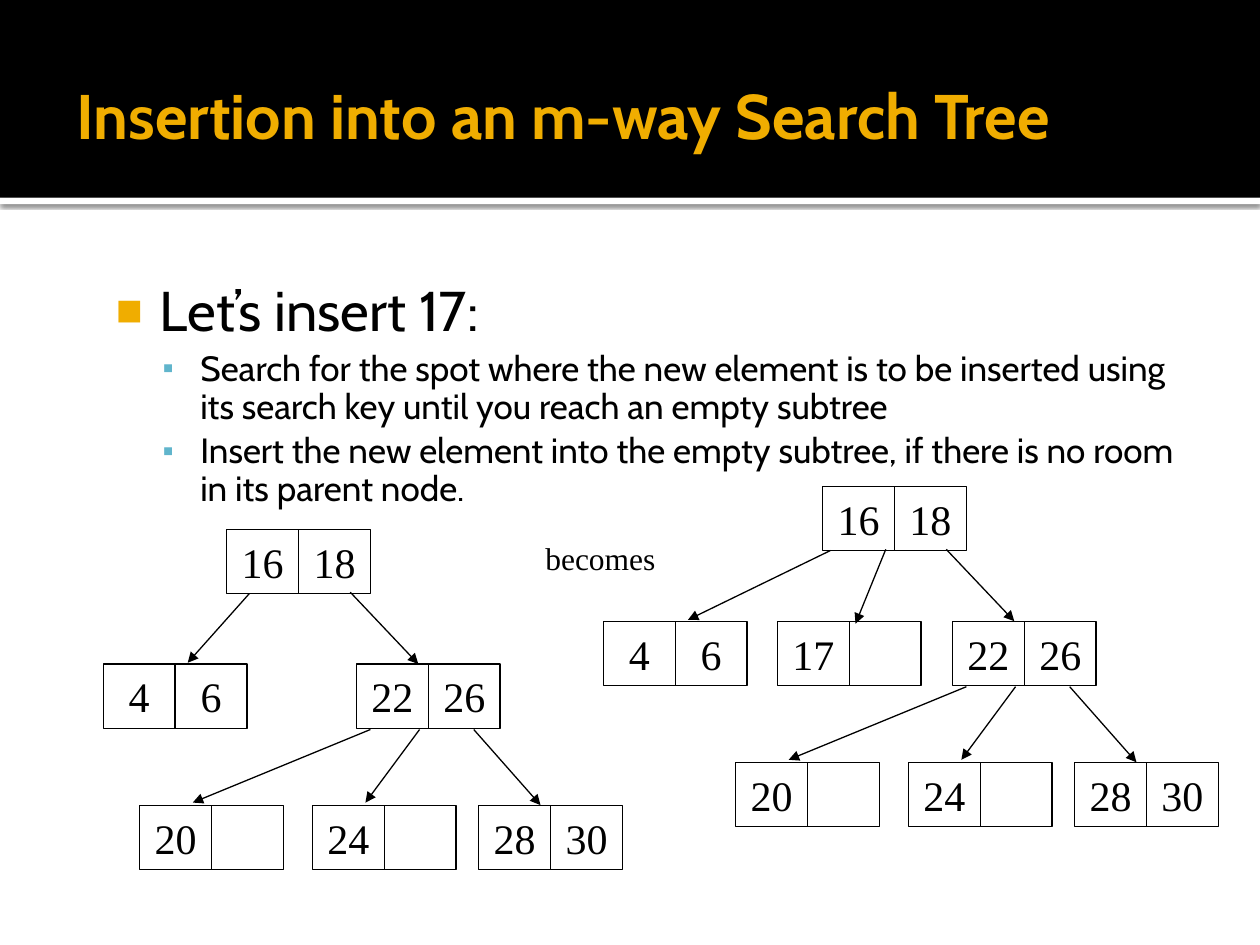
from lxml import etree
from pptx import Presentation
from pptx.dml.color import RGBColor
from pptx.enum import shapes, text
from pptx.oxml import ns
from pptx.util import Inches, Pt

BLACK = RGBColor(0x00, 0x00, 0x00)
WHITE = RGBColor(0xFF, 0xFF, 0xFF)
AMBER = RGBColor(0xF0, 0xAD, 0x00)
BLUE = RGBColor(0x60, 0xB5, 0xCC)
SANS, SERIF = "Cabin", "Times New Roman"

# Content
TITLE = "Insertion into an m-way Search Tree"
# text, size, space before, left indent, hanging indent, bullet, colour, bullet size %
BODY = [
    ("Let’s insert 17:", 32, 0, 0.48, 0.35, "■", AMBER, 80),
    ("Search for the spot where the new element is to be inserted using "
     "its search key until you reach an empty subtree", 20, 4, 0.8, 0.3, "▪", BLUE, 90),
    ("Insert the new element into the empty subtree, if there is no room "
     "in its parent node.", 20, 4, 0.8, 0.3, "▪", BLUE, 90),
]

# Trees: nodes are (keys, left, top), arrows are (x1, y1, x2, y2)
CELL_W, CELL_H = 0.57, 0.51
SHARED_NODES = [
    (("16", "18"), 1.8, 4.2),
    (("22", "26"), 2.83, 5.27),
    (("20", ""), 1.11, 6.39),
    (("24", ""), 2.48, 6.39),
    (("28", "30"), 3.8, 6.39),
]
SHARED_ARROWS = [
    (2.78, 4.7, 3.32, 5.27),
    (2.94, 5.79, 1.53, 6.37),
    (3.33, 5.79, 2.9, 6.37),
    (3.76, 5.79, 4.29, 6.39),
]
# Each tree: offset from the first, then its own nodes and arrows
TREES = [
    ((0, 0),
     [(("4", "6"), 0.82, 5.27)],
     [(1.98, 4.71, 1.49, 5.26)]),
    ((4.73, -0.34),
     [(("4", "6"), 0.06, 5.27), (("17", ""), 1.44, 5.27)],
     [(1.86, 4.71, 0.73, 5.26), (2.3, 4.7, 2.06, 5.29)]),
]

deck = Presentation()
deck.slide_width, deck.slide_height = Inches(10), Inches(7.5)
page = deck.slides.add_slide(deck.slide_layouts[6])


def add_xml(parent, tag, **attributes):
    return etree.SubElement(parent, ns.qn(tag), attributes)


def add_span(para, words, size, font, color, bold=False):
    span = para.add_run()
    span.text = words
    span.font.size, span.font.name, span.font.bold = Pt(size), font, bold
    span.font.color.rgb = color


def add_text_box(left, top, width, height, margins, wrap=True):
    box = page.shapes.add_textbox(*map(Inches, (left, top, width, height)))
    frame = box.text_frame
    frame.word_wrap = wrap
    (frame.margin_left, frame.margin_top,
     frame.margin_right, frame.margin_bottom) = map(Inches, margins)
    return frame


def add_rectangle(left, top, width, height, fill=None):
    box = page.shapes.add_shape(shapes.MSO_SHAPE.RECTANGLE,
                                *map(Inches, (left, top, width, height)))
    box.shadow.inherit = False
    if fill is None:
        box.fill.background()
        box.line.color.rgb, box.line.width = BLACK, Pt(0.75)
    else:
        box.fill.solid()
        box.fill.fore_color.rgb = fill
        box.line.fill.background()
    return box


def add_node(keys, left, top):
    for column, key in enumerate(keys):
        cell = add_rectangle(left + column * CELL_W, top, CELL_W, CELL_H)
        if key:
            frame = cell.text_frame
            frame.vertical_anchor = text.MSO_ANCHOR.MIDDLE
            para = frame.paragraphs[0]
            para.alignment = text.PP_ALIGN.CENTER
            add_span(para, key, 24, SERIF, BLACK)


def add_arrow(x1, y1, x2, y2):
    arrow = page.shapes.add_connector(shapes.MSO_CONNECTOR.STRAIGHT,
                                      *map(Inches, (x1, y1, x2, y2)))
    arrow.line.color.rgb, arrow.line.width = BLACK, Pt(0.75)
    add_xml(arrow.line._get_or_add_ln(), "a:tailEnd", type="triangle")
    add_xml(arrow._element.spPr, "a:effectLst")


def add_bullet(para, indent, hanging, mark, color, percent):
    props = para._p.get_or_add_pPr()
    props.set("marL", str(Inches(indent)))
    props.set("indent", str(-Inches(hanging)))
    add_xml(add_xml(props, "a:buClr"), "a:srgbClr", val=str(color))
    add_xml(props, "a:buSzPct", val=str(percent * 1000))
    add_xml(props, "a:buFont", typeface="Arial")
    add_xml(props, "a:buChar", char=mark)


# Header band with a shadowed white strip below it
strip = add_rectangle(0, 1.57, 10, 0.05, WHITE)
effects = strip._element.spPr.find(ns.qn("a:effectLst"))
shadow = add_xml(effects, "a:outerShdw", blurRad=str(Pt(2.5)), dist=str(Pt(0.8)),
                 dir="5400000", algn="tl", rotWithShape="0")
add_xml(add_xml(shadow, "a:srgbClr", val=str(BLACK)), "a:alpha", val="60000")
add_rectangle(0, 0, 10, 1.57, BLACK)

# Title
title = add_text_box(0.51, 0.28, 8.97, 1.25, (0.1, 0.05, 0.05, 0.05))
title.vertical_anchor = text.MSO_ANCHOR.MIDDLE
add_span(title.paragraphs[0], TITLE, 36, SANS, AMBER, bold=True)

# Bulleted text
body = add_text_box(0.73, 2.15, 8.81, 2.16, (0.06, 0.1, 0.1, 0.05))
for number, (words, size, before, *bullet) in enumerate(BODY):
    para = body.add_paragraph() if number else body.paragraphs[0]
    para.line_spacing, para.space_before = 0.9, Pt(before)
    add_bullet(para, *bullet)
    add_span(para, words, size, SANS, BLACK)

# Trees before and after the insertion
for (dx, dy), own_nodes, own_arrows in TREES:
    for keys, left, top in SHARED_NODES + own_nodes:
        add_node(keys, left + dx, top + dy)
    for x1, y1, x2, y2 in SHARED_ARROWS + own_arrows:
        add_arrow(x1 + dx, y1 + dy, x2 + dx, y2 + dy)

# Label between the trees
label = add_text_box(4.23, 4.23, 1.08, 0.4, (0.1, 0.05, 0.1, 0.05), wrap=False)
add_span(label.paragraphs[0], "becomes", 18, SERIF, BLACK)

deck.save("out.pptx")
